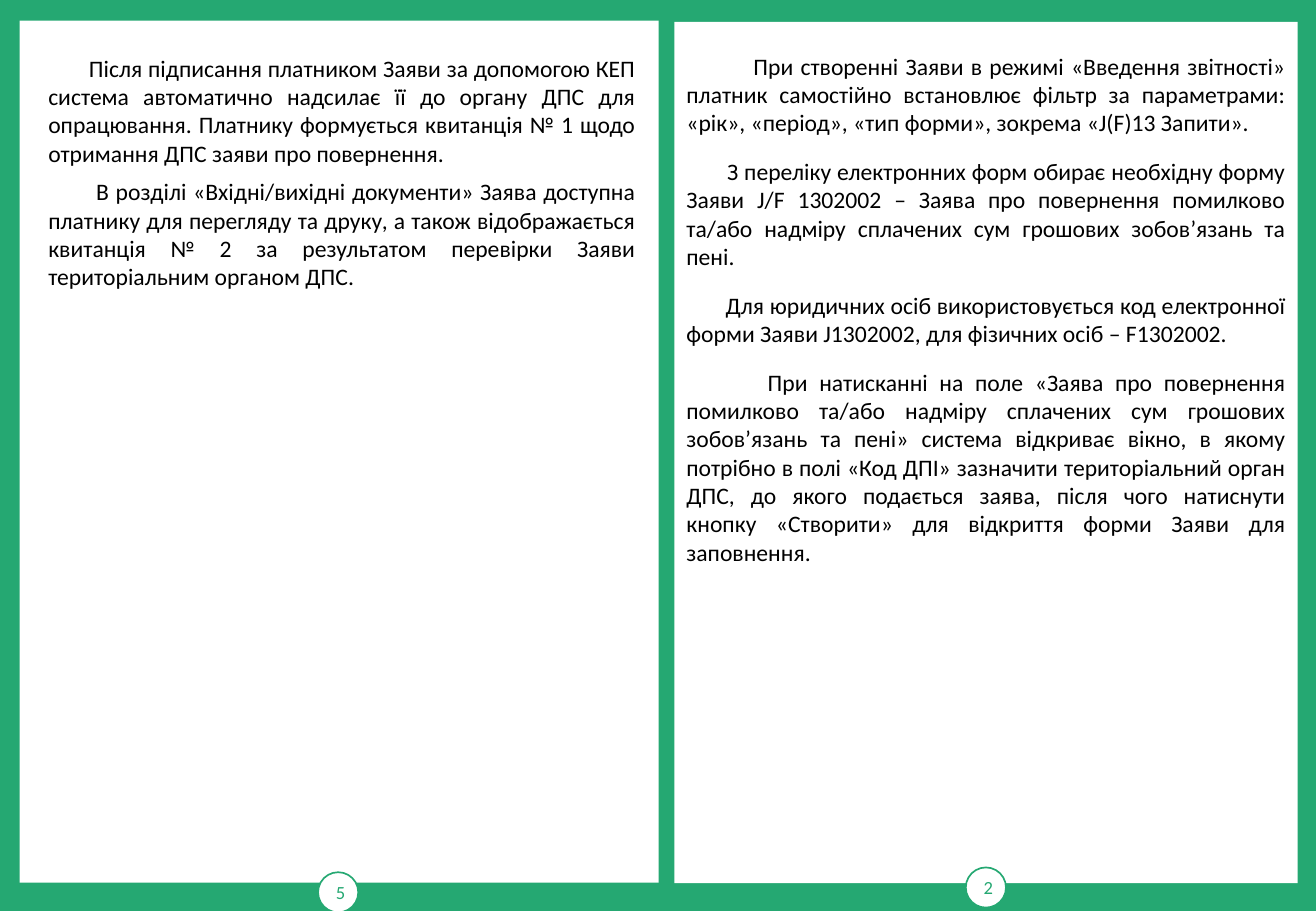
from pptx import Presentation
from pptx.dml.color import RGBColor
from pptx.enum import shapes, text
from pptx.util import Cm, Pt

GREEN = RGBColor(0x25, 0xA8, 0x72)
WHITE = RGBColor(0xFF, 0xFF, 0xFF)
BLACK = RGBColor(0, 0, 0)

# Each page: panel, number, badge corner, text box, top margin, gap after (pt),
# paragraphs as (first-line indent, text); lengths in cm
PAGES = [
    ((0.41, 0.43, 13.36, 18.03), "5", (6.65, 18.24),
     (0.76, 0.99, 12.78, 7.06), 0.13, 6, [
        (0.85, "Після підписання платником Заяви за допомогою КЕП система "
               "автоматично надсилає її до органу ДПС для опрацювання. Платнику "
               "формується квитанція № 1 щодо отримання ДПС заяви про повернення."),
        (1.0, "В розділі «Вхідні/вихідні документи» Заява доступна платнику для "
              "перегляду та друку, а також відображається квитанція № 2 за "
              "результатом перевірки Заяви територіальним органом ДПС."),
    ]),
    ((14.1, 0.46, 13.03, 18.01), "2", (20.19, 18.14),
     (14.1, 0.23, 13.03, 18.95), 0.85, 12, [
        (1.4, "При створенні Заяви в режимі «Введення звітності» платник "
              "самостійно встановлює фільтр за параметрами: «рік», «період», "
              "«тип форми», зокрема «J(F)13 Запити»."),
        (0.85, "З переліку електронних форм обирає необхідну форму Заяви "
               "J/F 1302002 – Заява про повернення помилково та/або надміру "
               "сплачених сум грошових зобов’язань та пені."),
        (0.82, "Для юридичних осіб використовується код електронної форми Заяви "
               "J1302002, для фізичних осіб – F1302002."),
        (1.7, "При натисканні на поле «Заява про повернення помилково та/або "
              "надміру сплачених сум грошових зобов’язань та пені» система "
              "відкриває вікно, в якому потрібно в полі «Код ДПІ» зазначити "
              "територіальний орган ДПС, до якого подається заява, після чого "
              "натиснути кнопку «Створити» для відкриття форми Заяви для "
              "заповнення."),
    ]),
]
BADGE = 0.84


def style_paragraph(p, size, color, align):
    p.font.name = "Calibri"
    p.font.size = Pt(size)
    p.font.color.rgb = color
    p.alignment = align


prs = Presentation()
prs.slide_width, prs.slide_height = Cm(27.51), Cm(19.05)
s = prs.slides.add_slide(prs.slide_layouts[6])
s.background.fill.solid()
s.background.fill.fore_color.rgb = GREEN

for panel, number, corner, box, top, gap, paragraphs in PAGES:
    # White page with its number badge
    group = s.shapes.add_group_shape()
    page = group.shapes.add_shape(shapes.MSO_SHAPE.RECTANGLE, *map(Cm, panel))
    badge = group.shapes.add_shape(
        shapes.MSO_SHAPE.OVAL, *map(Cm, corner), Cm(BADGE), Cm(BADGE))
    for sp in (page, badge):
        sp.shadow.inherit = False
        sp.fill.solid()
        sp.fill.fore_color.rgb = WHITE
    page.line.fill.background()
    badge.line.color.rgb = GREEN
    badge.line.width = Pt(1)
    tf = badge.text_frame
    tf.vertical_anchor = text.MSO_ANCHOR.MIDDLE
    tf.text = number
    style_paragraph(tf.paragraphs[0], 11, GREEN, text.PP_ALIGN.CENTER)

    # Page text
    tf = s.shapes.add_textbox(*map(Cm, box)).text_frame
    tf.word_wrap = True
    tf.margin_top = Cm(top)
    for i, (indent, words) in enumerate(paragraphs):
        p = tf.add_paragraph() if i else tf.paragraphs[0]
        p.text = words
        style_paragraph(p, 14, BLACK, text.PP_ALIGN.JUSTIFY)
        p.space_after = Pt(gap)
        p._p.get_or_add_pPr().set("indent", str(Cm(indent)))

prs.save("out.pptx")
